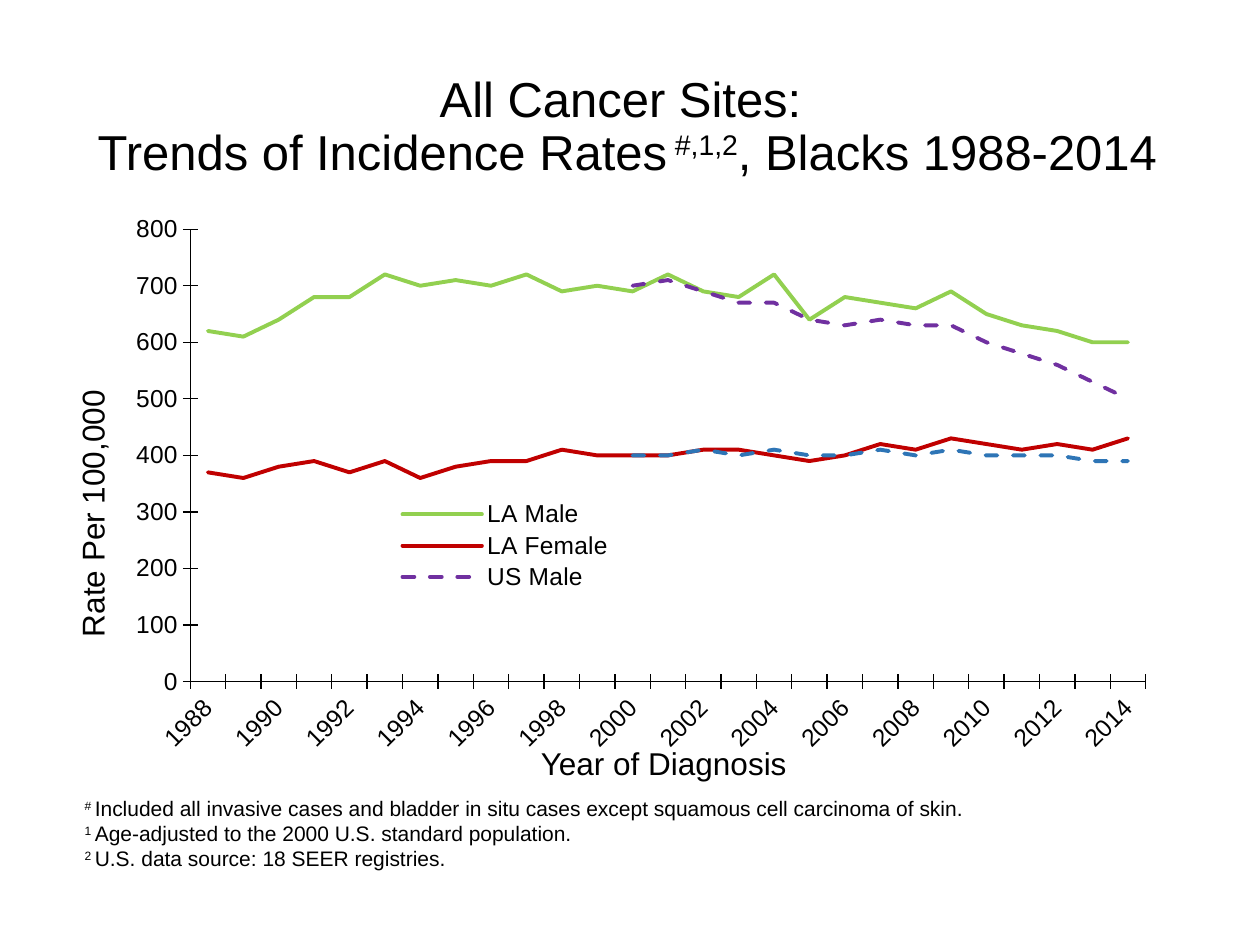
from dataclasses import dataclass

from lxml.etree import SubElement
from pptx import Presentation
from pptx.chart.data import CategoryChartData
from pptx.dml.color import RGBColor
from pptx.enum.chart import XL_CHART_TYPE, XL_LEGEND_POSITION, XL_TICK_MARK
from pptx.enum.dml import MSO_LINE
from pptx.enum.text import MSO_ANCHOR, MSO_AUTO_SIZE, PP_ALIGN
from pptx.oxml import parse_xml
from pptx.oxml.ns import nsdecls, qn
from pptx.util import Pt

BLACK = RGBColor(0x00, 0x00, 0x00)
GREEN = RGBColor(0x92, 0xD0, 0x50)
RED = RGBColor(0xC0, 0x00, 0x00)
PURPLE = RGBColor(0x70, 0x30, 0xA0)
BLUE = RGBColor(0x2E, 0x75, 0xB6)

FONT = "Arial"
CHART_WIDTH, CHART_HEIGHT = 603.4, 321.8
FIRST_YEAR, FIRST_US_YEAR, LAST_YEAR = 1988, 2000, 2014
NO_US_DATA = [None] * (FIRST_US_YEAR - FIRST_YEAR)


@dataclass
class TextPart:
    text: str
    superscript: bool = False


@dataclass
class Label:
    left: float
    top: float
    width: float
    height: float
    size: int
    paragraphs: list[list[TextPart]]
    rotation: int = 0


@dataclass
class Trend:
    name: str
    color: RGBColor
    rates: list
    dashed: bool = False


TITLE = [
    TextPart("All Cancer Sites: \vTrends of Incidence Rates"),
    TextPart(" #,1,2", True),
    TextPart(", Blacks 1988-2014"),
]

LABELS = [
    Label(302, 421.9, 156.2, 28.8, 18, [[TextPart("Year of Diagnosis")]]),
    Label(-25.9, 278.2, 157, 28.8, 18, [[TextPart("Rate Per 100,000")]], 270),
    Label(41.3, 451, 521.3, 51.1, 12, [
        [TextPart("# ", True),
         TextPart("Included all invasive cases and bladder in situ cases "
                  "except squamous cell carcinoma of skin.")],
        [TextPart("1 ", True),
         TextPart("Age-adjusted to the 2000 U.S. standard population.")],
        [TextPart("2 ", True),
         TextPart("U.S. data source: 18 SEER registries.")],
    ]),
]

TRENDS = [
    Trend("LA Male", GREEN,
          [620, 610, 640, 680, 680, 720, 700, 710, 700, 720, 690, 700, 690, 720,
           690, 680, 720, 640, 680, 670, 660, 690, 650, 630, 620, 600, 600]),
    Trend("LA Female", RED,
          [370, 360, 380, 390, 370, 390, 360, 380, 390, 390, 410, 400, 400, 400,
           410, 410, 400, 390, 400, 420, 410, 430, 420, 410, 420, 410, 430]),
    Trend("US Male", PURPLE, NO_US_DATA +
          [700, 710, 690, 670, 670, 640, 630, 640, 630, 630, 600, 580, 560, 530,
           500], True),
    Trend("US Female", BLUE, NO_US_DATA +
          [400, 400, 410, 400, 410, 400, 400, 410, 400, 410, 400, 400, 400, 390,
           390], True),
]


def format_font(font, size: int) -> None:
    formats = {"name": FONT, "size": Pt(size), "bold": False}
    for attribute, value in formats.items():
        setattr(font, attribute, value)
    font.color.rgb = BLACK


def add_parts(paragraph, parts: list[TextPart], size: int) -> None:
    """Add runs; a vertical tab in a part becomes a line break."""
    for part in parts:
        for index, text in enumerate(part.text.split("\v")):
            if index:
                paragraph.add_line_break()
                line_break = paragraph._p.findall(qn("a:br"))[-1]
                SubElement(line_break, qn("a:rPr"), sz=str(size * 100))
            run = paragraph.add_run()
            run.text = text
            format_font(run.font, size)
            if part.superscript:
                run._r.get_or_add_rPr().set("baseline", "30000")


def add_label(slide, label: Label) -> None:
    box = slide.shapes.add_textbox(
        Pt(label.left), Pt(label.top), Pt(label.width), Pt(label.height))
    box.rotation = label.rotation
    frame = box.text_frame
    frame.word_wrap = False
    frame.auto_size = MSO_AUTO_SIZE.SHAPE_TO_FIT_TEXT
    for index, parts in enumerate(label.paragraphs):
        paragraph = frame.add_paragraph() if index else frame.paragraphs[0]
        add_parts(paragraph, parts, label.size)


def fill_title(title) -> None:
    placement = {"left": Pt(41.3), "top": Pt(28.8),
                 "width": Pt(634.3), "height": Pt(88.6)}
    for attribute, value in placement.items():
        setattr(title, attribute, value)
    frame = title.text_frame
    frame.auto_size = MSO_AUTO_SIZE.NONE
    frame.vertical_anchor = MSO_ANCHOR.MIDDLE
    paragraph = frame.paragraphs[0]
    paragraph.alignment = PP_ALIGN.CENTER
    paragraph.line_spacing = 0.9
    add_parts(paragraph, TITLE, 28)


def manual_layout(left: float, top: float, width: float, height: float,
                  target: str = ""):
    """Return a chart layout element for a place in points inside the chart."""
    target_xml = f'<c:layoutTarget val="{target}"/>' if target else ""
    return parse_xml(
        f'<c:layout {nsdecls("c")}><c:manualLayout>{target_xml}'
        '<c:xMode val="edge"/><c:yMode val="edge"/>'
        f'<c:x val="{left / CHART_WIDTH}"/><c:y val="{top / CHART_HEIGHT}"/>'
        f'<c:w val="{width / CHART_WIDTH}"/><c:h val="{height / CHART_HEIGHT}"/>'
        '</c:manualLayout></c:layout>')


def format_axis(axis) -> None:
    formats = {"has_major_gridlines": False,
               "major_tick_mark": XL_TICK_MARK.CROSS,
               "minor_tick_mark": XL_TICK_MARK.NONE}
    for attribute, value in formats.items():
        setattr(axis, attribute, value)
    axis.format.line.color.rgb = BLACK
    axis.format.line.width = Pt(0.75)
    format_font(axis.tick_labels.font, 14)


def format_legend(chart) -> None:
    """Place the legend inside the plot, without the last series."""
    chart.has_legend = True
    legend = chart.legend
    legend.position = XL_LEGEND_POSITION.BOTTOM
    legend.include_in_layout = False
    format_font(legend.font, 14)
    hidden_entry = parse_xml(
        f'<c:legendEntry {nsdecls("c")}><c:idx val="{len(TRENDS) - 1}"/>'
        '<c:delete val="1"/></c:legendEntry>')
    for old_layout in legend._element.findall(qn("c:layout")):
        legend._element.remove(old_layout)
    position = legend._element.find(qn("c:legendPos"))
    position.addnext(manual_layout(152.3, 160.9, 138.8, 55.6))
    position.addnext(hidden_entry)


def add_trend_chart(slide) -> None:
    data = CategoryChartData()
    data.categories = [str(year) for year in range(FIRST_YEAR, LAST_YEAR + 1)]
    for trend in TRENDS:
        data.add_series(trend.name, trend.rates)
    chart = slide.shapes.add_chart(
        XL_CHART_TYPE.LINE, Pt(67), Pt(123.1),
        Pt(CHART_WIDTH), Pt(CHART_HEIGHT), data).chart
    chart.has_title = False
    format_font(chart.font, 10)

    plot = chart.plots[0]
    plot.vary_by_categories = False
    for series, trend in zip(plot.series, TRENDS):
        series.smooth = False
        line = series.format.line
        line.color.rgb = trend.color
        line.width = Pt(2.25)
        if trend.dashed:
            line.dash_style = MSO_LINE.DASH
        series._element.spPr.find(qn("a:ln")).set("cap", "rnd")

    years, rates = chart.category_axis, chart.value_axis
    for axis in (years, rates):
        format_axis(axis)
    rates.minimum_scale, rates.maximum_scale, rates.major_unit = 0, 800, 100
    years._element.find(qn("c:txPr")).find(qn("a:bodyPr")).set("rot", "-2700000")
    years._element.find(qn("c:noMultiLvlLbl")).addprevious(
        parse_xml(f'<c:tickLblSkip {nsdecls("c")} val="2"/>'))

    format_legend(chart)
    plot_area = chart._chartSpace.chart.plotArea
    for old_layout in plot_area.findall(qn("c:layout")):
        plot_area.remove(old_layout)
    plot_area.insert(0, manual_layout(41.7, 7.8, 546, 258.6, "inner"))


def main() -> None:
    presentation = Presentation()
    presentation.slide_width, presentation.slide_height = Pt(720), Pt(540)
    slide = presentation.slides.add_slide(presentation.slide_layouts[5])
    fill_title(slide.shapes.title)
    add_trend_chart(slide)
    for label in LABELS:
        add_label(slide, label)
    presentation.save("out.pptx")


if __name__ == "__main__":
    main()
